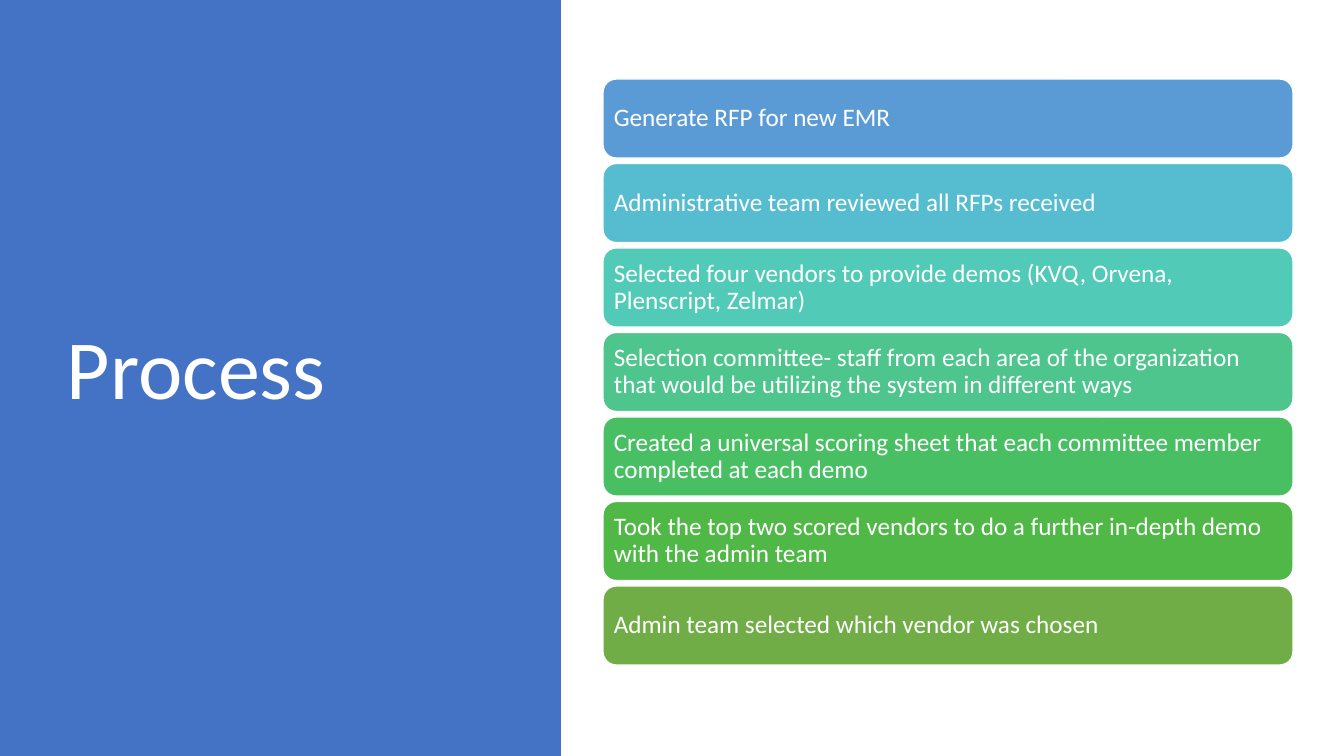
from pptx import Presentation
from pptx.dml.color import RGBColor
from pptx.enum.shapes import MSO_SHAPE as Preset
from pptx.enum.text import MSO_ANCHOR as Anchor, PP_ALIGN as Align
from pptx.util import Pt

EMU_PER_PX = 914400 / 100.8
SLIDE_WIDTH, SLIDE_HEIGHT = 1344, 756
TITLE_ONLY = 5

COLORS = {
    "white": "FFFFFF",
    "panel": "4472C4",
    "blue": "5B9BD5",
    "cyan": "56BCD0",
    "teal": "52CAB8",
    "mint": "4DC58D",
    "emerald": "49BF64",
    "green": "50B846",
    "olive": "70AD47",
}

STEPS = [
    ("blue", "Generate RFP for new EMR"),
    ("cyan", "Administrative team reviewed all RFPs received"),
    ("teal", "Selected four vendors to provide demos (KVQ, Orvena, Plenscript, Zelmar)"),
    ("mint", "Selection committee- staff from each area of the organization "
             "that would be utilizing the system in different ways"),
    ("emerald", "Created a universal scoring sheet that each committee member "
                "completed at each demo"),
    ("green", "Took the top two scored vendors to do a further in-depth demo "
              "with the admin team"),
    ("olive", "Admin team selected which vendor was chosen"),
]
FIRST_TOP, LAST_TOP = 79, 586


def px(length):
    return round(length * EMU_PER_PX)


def rgb(name):
    return RGBColor.from_string(COLORS[name])


class SlideBuilder:
    font = "Calibri"
    text_color = "white"

    def __init__(self, slide):
        self.slide = slide

    def label(self, shape, text, size, inset_x, inset_y):
        """Fill a shape with one left-aligned, vertically centred paragraph."""
        frame = shape.text_frame
        frame.word_wrap = True
        frame.vertical_anchor = Anchor.MIDDLE
        frame.margin_left = frame.margin_right = px(inset_x)
        frame.margin_top = frame.margin_bottom = px(inset_y)
        paragraph = frame.paragraphs[0]
        paragraph.alignment = Align.LEFT
        paragraph.line_spacing = 0.9
        run = paragraph.add_run()
        run.text = text
        run.font.name = self.font
        run.font.size = Pt(size)
        run.font.color.rgb = rgb(self.text_color)

    def block(self, preset, left, top, width, height, fill):
        shape = self.slide.shapes.add_shape(
            preset, px(left), px(top), px(width), px(height))
        shape.shadow.inherit = False
        shape.fill.solid()
        shape.fill.fore_color.rgb = rgb(fill)
        shape.line.fill.background()
        return shape

    def title(self, text, left, top, width, height):
        title = self.slide.shapes.title
        title.left, title.top = px(left), px(top)
        title.width, title.height = px(width), px(height)
        self.label(title, text, 60, 10, 5)

    def panel(self, width, height):
        """Place the colour panel behind the title."""
        panel = self.block(Preset.RECTANGLE, 0, 0, width, height, "panel")
        self.slide.shapes.title.element.addprevious(panel.element)

    def step(self, text, top, fill):
        step = self.block(Preset.ROUNDED_RECTANGLE, 603, top, 690, 79, fill)
        step.line.color.rgb = rgb("white")
        step.line.width = Pt(1)
        self.label(step, text, 18, 7, 7)


def main():
    deck = Presentation()
    deck.slide_width, deck.slide_height = px(SLIDE_WIDTH), px(SLIDE_HEIGHT)
    builder = SlideBuilder(deck.slides.add_slide(deck.slide_layouts[TITLE_ONLY]))

    builder.panel(561, SLIDE_HEIGHT)
    builder.title("Process", 57, 69, 419, 607)
    pitch = (LAST_TOP - FIRST_TOP) / (len(STEPS) - 1)
    for index, (fill, text) in enumerate(STEPS):
        builder.step(text, FIRST_TOP + index * pitch, fill)

    deck.save("out.pptx")


if __name__ == "__main__":
    main()
